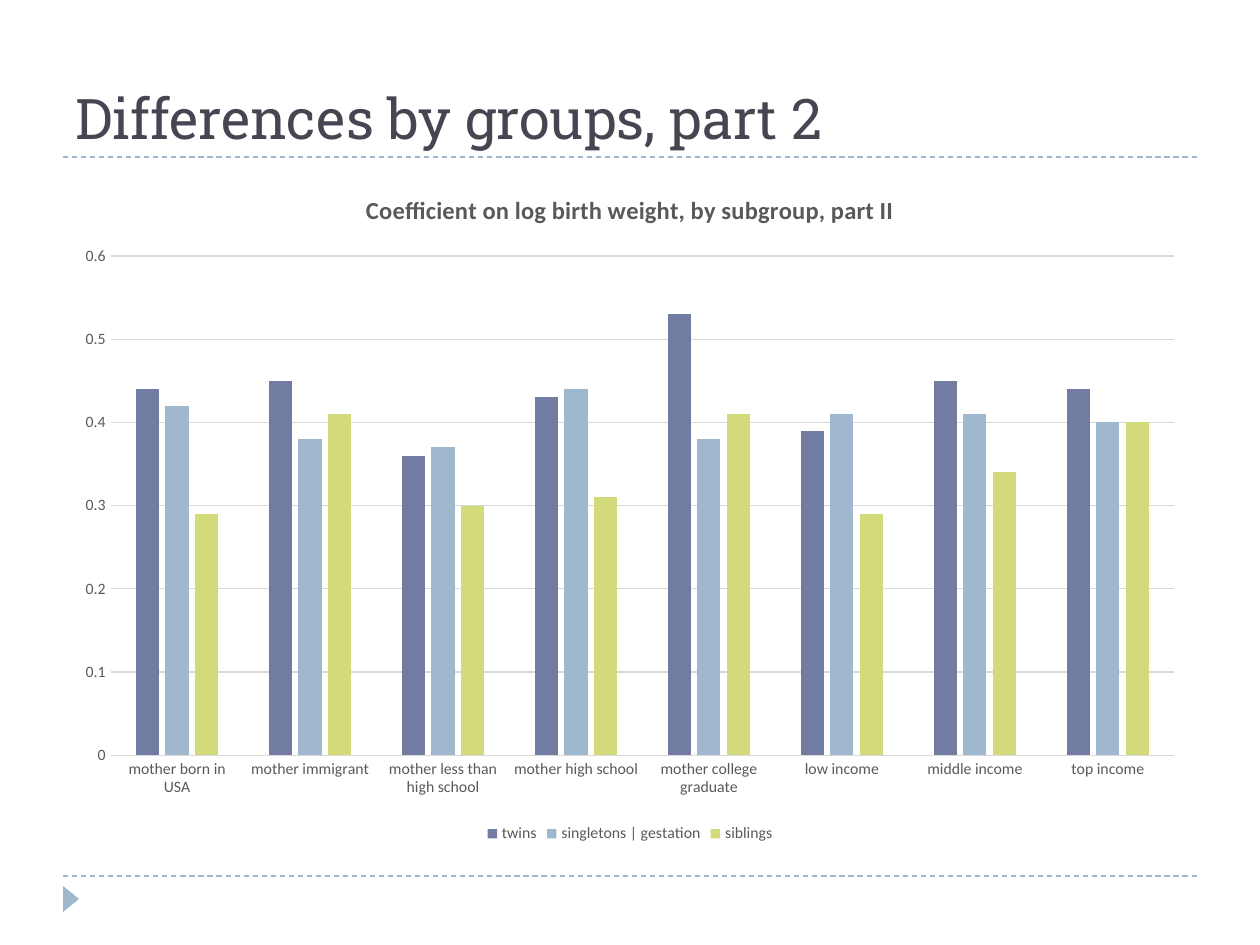
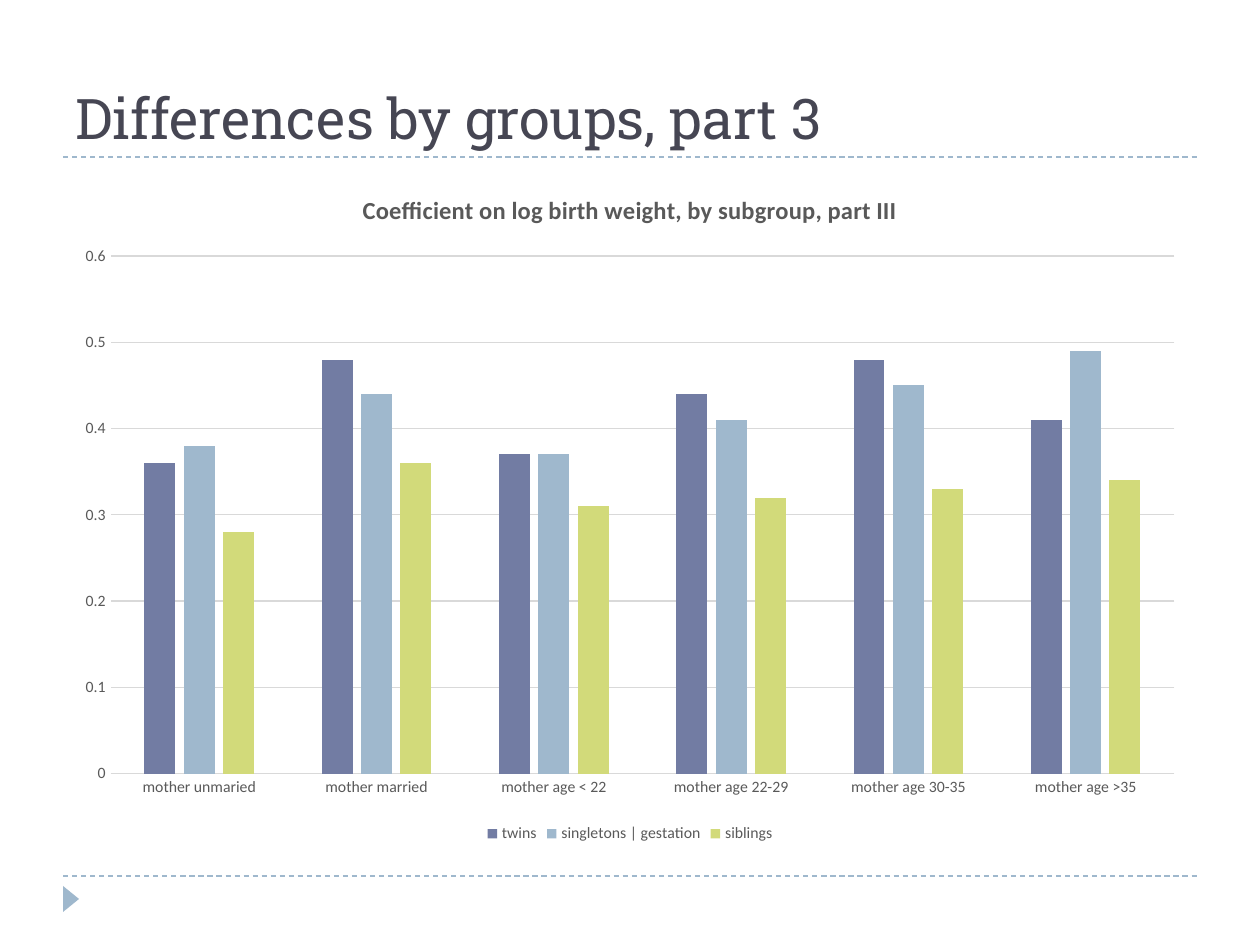
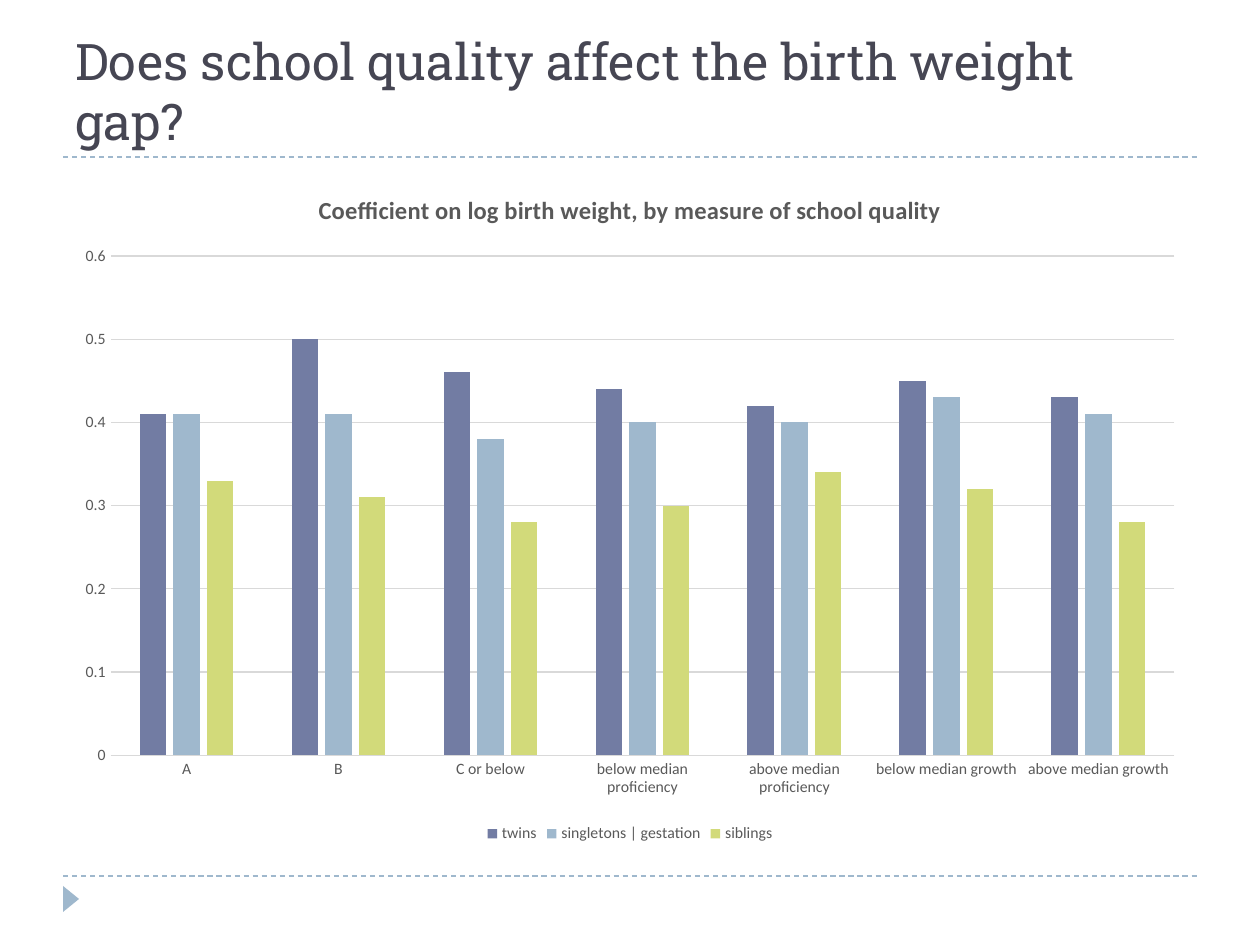
from dataclasses import dataclass

from pptx import Presentation
from pptx.chart.data import CategoryChartData
from pptx.dml.color import RGBColor
from pptx.enum.chart import XL_CHART_TYPE, XL_LEGEND_POSITION, XL_TICK_MARK
from pptx.enum.dml import MSO_LINE
from pptx.enum.shapes import MSO_CONNECTOR, MSO_SHAPE
from pptx.enum.text import MSO_ANCHOR
from pptx.oxml.ns import qn
from pptx.util import Emu, Pt
from lxml.etree import SubElement

# Content
GROUPS = ("twins", "singletons | gestation", "siblings")

SLIDES = [
    dict(
        title="Differences by groups, part 2",
        title_size=32,
        chart_title="Coefficient on log birth weight, by subgroup, part II",
        coefficients=[
            ("mother born in USA", 0.44, 0.42, 0.29),
            ("mother immigrant", 0.45, 0.38, 0.41),
            ("mother less than high school", 0.36, 0.37, 0.30),
            ("mother high school", 0.43, 0.44, 0.31),
            ("mother college graduate", 0.53, 0.38, 0.41),
            ("low income", 0.39, 0.41, 0.29),
            ("middle income", 0.45, 0.41, 0.34),
            ("top income", 0.44, 0.40, 0.40),
        ],
    ),
    dict(
        title="Differences by groups, part 3",
        title_size=32,
        chart_title="Coefficient on log birth weight, by subgroup, part III",
        coefficients=[
            ("mother unmaried", 0.36, 0.38, 0.28),
            ("mother married", 0.48, 0.44, 0.36),
            ("mother age < 22", 0.37, 0.37, 0.31),
            ("mother age 22-29", 0.44, 0.41, 0.32),
            ("mother age 30-35", 0.48, 0.45, 0.33),
            ("mother age >35", 0.41, 0.49, 0.34),
        ],
    ),
    dict(
        title="Does school quality affect the birth weight gap?",
        title_size=28.8,
        chart_title="Coefficient on log birth weight, by measure of school quality",
        coefficients=[
            ("A", 0.41, 0.41, 0.33),
            ("B", 0.50, 0.41, 0.31),
            ("C or below", 0.46, 0.38, 0.28),
            ("below median proficiency", 0.44, 0.40, 0.30),
            ("above median proficiency", 0.42, 0.40, 0.34),
            ("below median growth", 0.45, 0.43, 0.32),
            ("above median growth", 0.43, 0.41, 0.28),
        ],
    ),
]


@dataclass(frozen=True)
class Theme:
    title_font: str = "Roboto Slab"
    chart_font: str = "Calibri"
    title_color: RGBColor = RGBColor.from_string("464653")
    chart_text: RGBColor = RGBColor.from_string("595959")
    grid: RGBColor = RGBColor.from_string("D9D9D9")
    accent: RGBColor = RGBColor.from_string("9FB8CD")
    groups: tuple = tuple(map(RGBColor.from_string, ("727CA3", "9FB8CD", "D2DA7A")))
    chart_title_size: int = 14
    label_size: int = 9
    rule_width: float = 0.75


THEME = Theme()

# Layout in px, 126 to the inch
PX = 914400 / 126
PAGE = (1260, 945)
LEFT, WIDTH = 63, 1134
TITLE_BOX = (LEFT, 21, WIDTH, 136)
CHART_BOX = (LEFT, 168, WIDTH, 680)
RULES = (157, 876)
MARKER_BOX = (58, 891, 26, 16)


def px(*lengths):
    return [Emu(round(length * PX)) for length in lengths]


def style_font(font, size, color, name=THEME.chart_font, bold=False):
    font.name, font.size, font.bold = name, Pt(size), bold
    font.color.rgb = color


def style_line(line, color):
    line.color.rgb = color
    line.width = Pt(THEME.rule_width)


def add_frame(slide):
    """Dashed rules and the footer marker."""
    for y in RULES:
        rule = slide.shapes.add_connector(
            MSO_CONNECTOR.STRAIGHT, *px(LEFT, y, LEFT + WIDTH, y))
        style_line(rule.line, THEME.accent)
        rule.line.dash_style = MSO_LINE.DASH
        SubElement(rule._element.spPr, qn("a:effectLst"))

    marker = slide.shapes.add_shape(MSO_SHAPE.ISOSCELES_TRIANGLE, *px(*MARKER_BOX))
    marker.rotation = 90
    marker.shadow.inherit = False
    marker.fill.solid()
    marker.fill.fore_color.rgb = THEME.accent
    marker.line.fill.background()


def add_title(slide, title, size):
    frame = slide.shapes.add_textbox(*px(*TITLE_BOX)).text_frame
    frame.word_wrap = True
    frame.vertical_anchor = MSO_ANCHOR.BOTTOM
    heading = frame.paragraphs[0]
    heading.text = title
    style_font(heading.font, size, THEME.title_color, THEME.title_font)


def add_coefficient_chart(slide, chart_title, coefficients):
    subgroups, *columns = zip(*coefficients)
    data = CategoryChartData()
    data.categories = subgroups
    for group, values in zip(GROUPS, columns):
        data.add_series(group, values)
    chart = slide.shapes.add_chart(
        XL_CHART_TYPE.COLUMN_CLUSTERED, *px(*CHART_BOX), data).chart
    style_font(chart.font, THEME.label_size, THEME.chart_text)

    # Chart title and legend
    caption = chart.chart_title.text_frame.paragraphs[0]
    caption.text = chart_title
    style_font(caption.font, THEME.chart_title_size, THEME.chart_text, bold=True)
    chart.chart_title.include_in_layout = False
    chart.has_legend = True
    chart.legend.position = XL_LEGEND_POSITION.BOTTOM
    chart.legend.include_in_layout = False

    # Columns
    plot = chart.plots[0]
    plot.gap_width, plot.overlap = 219, -27
    plot.vary_by_categories = False
    for series, color in zip(plot.series, THEME.groups):
        series.format.fill.solid()
        series.format.fill.fore_color.rgb = color

    # Axes
    for axis in (chart.category_axis, chart.value_axis):
        axis.major_tick_mark = axis.minor_tick_mark = XL_TICK_MARK.NONE
    style_line(chart.category_axis.format.line, THEME.grid)
    scale = chart.value_axis
    scale.minimum_scale, scale.maximum_scale, scale.major_unit = 0, 0.6, 0.1
    scale.format.line.fill.background()
    style_line(scale.major_gridlines.format.line, THEME.grid)


def main():
    deck = Presentation()
    deck.slide_width, deck.slide_height = px(*PAGE)
    blank = deck.slide_layouts[6]
    for content in SLIDES:
        slide = deck.slides.add_slide(blank)
        add_frame(slide)
        add_title(slide, content["title"], content["title_size"])
        add_coefficient_chart(slide, content["chart_title"], content["coefficients"])
    deck.save("out.pptx")


if __name__ == "__main__":
    main()
